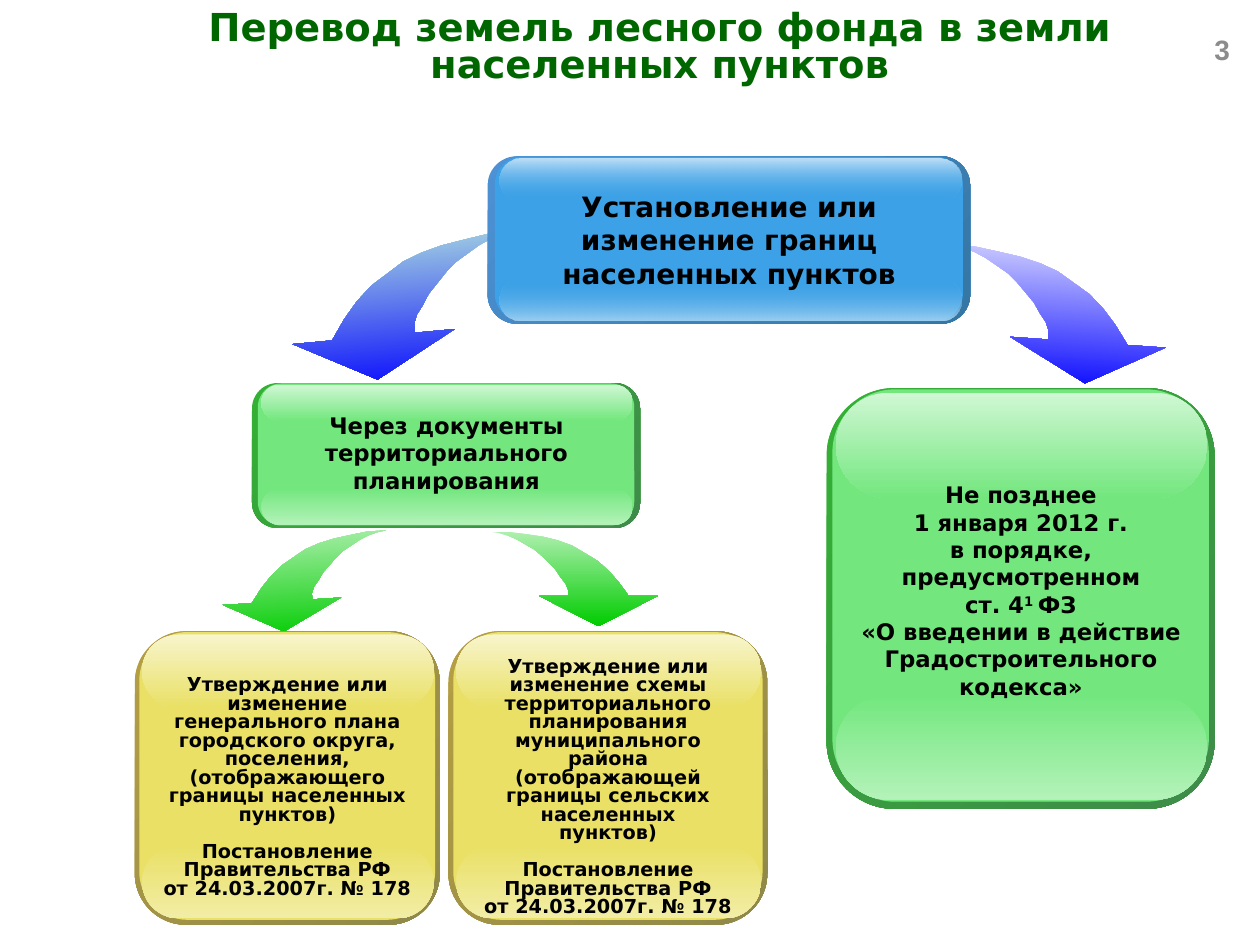
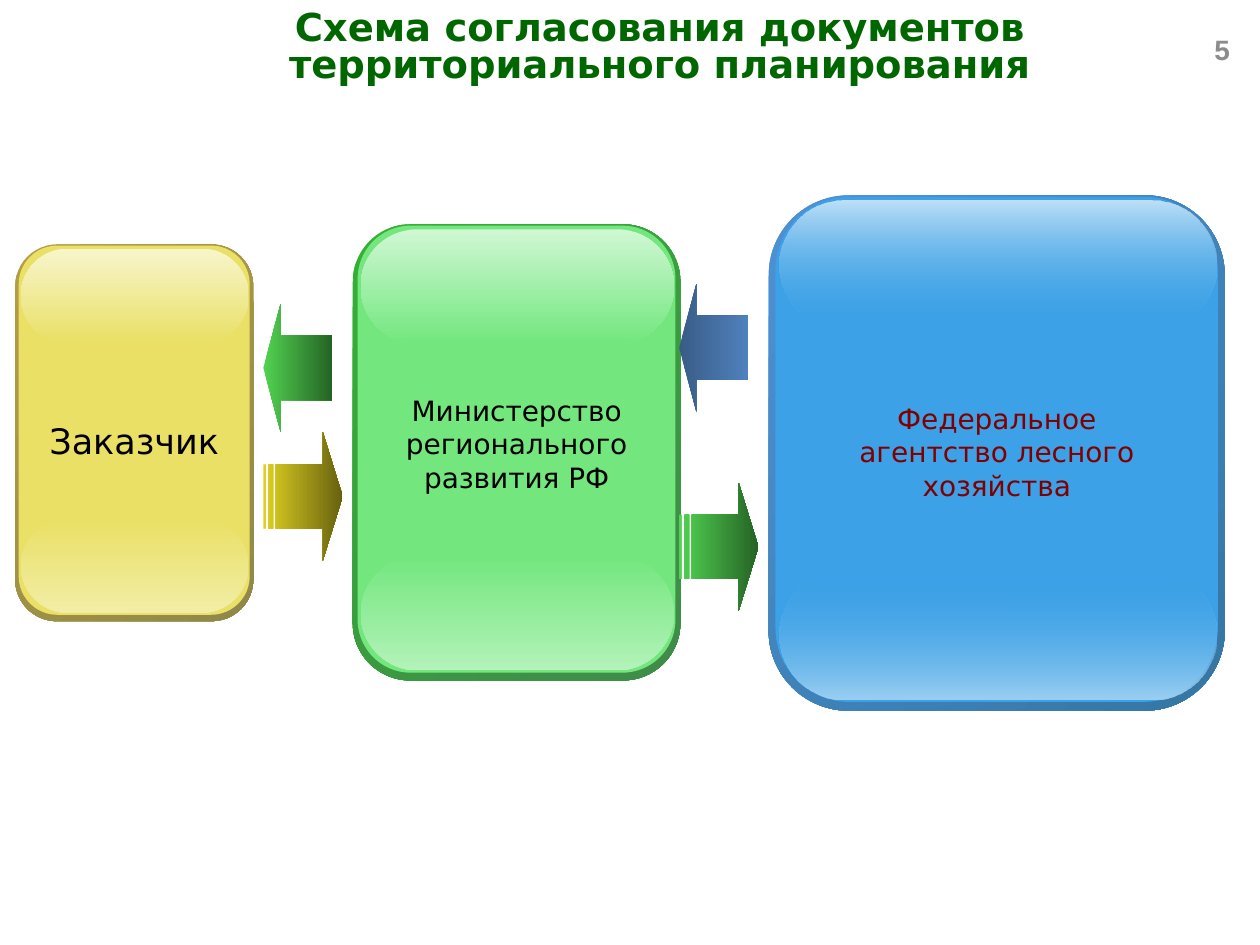
"""Builds two slides on moving forest land into settlements and on plan approval."""
from lxml import etree
from pptx import Presentation
from pptx.dml.color import RGBColor
from pptx.enum import shapes as kinds, text as txt
from pptx.oxml.ns import qn
from pptx.util import Inches, Pt

DECREE = ["Постановление Правительства РФ", "от 24.03.2007г. № 178"]

PALETTES = {
    "blue": dict(rim=("4E91D4", "3477A4"), face="3CA1E6", top=("BEE0F7", "3CA1E600"),
                 bottom=("3CA1E600", "9BCFF2"), text_top=0.08),
    "green": dict(rim=("34B034", "3F8B4A"), face="73E77E", top=("D0F7D4", "73E77E"),
                  bottom=("73E77E", "B3F2B9"), text_top=0.063),
    "yellow": dict(rim=("B59F43", "8F8849"), face="E9E065", top=("F8F5CC", "E9E065"),
                   bottom=("E9E065", "F2EDA6"), text_top=0.116),
}

TRANSFER = dict(
    title="Перевод земель лесного фонда в земли населенных пунктов",
    number="3",
    cards=[
        ("green", (2, 3.04, 3.08, 1.15),
         [["Через документы территориального планирования"]], dict(size=13, bold=True)),
        ("green", (6.56, 3.08, 3.08, 3.34),
         [["Не позднее\n1 января 2012 г.\nв порядке, предусмотренном\nст. 4^1 ^ФЗ\n"
           "«О введении в действие Градостроительного кодекса»"]], dict(size=13, bold=True)),
        ("yellow", (1.07, 5.01, 2.42, 2.33),
         [["Утверждение или изменение генерального плана городского округа, поселения, "
           "(отображающего границы населенных пунктов)"], DECREE],
         dict(size=11, bold=True, spacing=0.8)),
        ("yellow", (3.56, 5.01, 2.53, 2.33),
         [["Утверждение или изменение схемы территориального планирования "
           "муниципального района",
           "(отображающей границы сельских населенных", "пунктов)"], DECREE],
         dict(size=11, bold=True, spacing=0.8)),
        ("blue", (3.87, 1.24, 3.83, 1.33),
         [["Установление или изменение границ населенных пунктов"]],
         dict(size=16, bold=True)),
    ],
)

APPROVAL = dict(
    title="Схема согласования документов территориального планирования",
    number="5",
    cards=[
        ("green", (2.8, 1.78, 2.6, 3.62),
         [["Министерство регионального развития РФ"]], dict(size=16)),
        ("yellow", (0.12, 1.94, 1.89, 2.99), [["Заказчик"]], dict(size=20, spacing=0.75)),
        ("blue", (6.1, 1.55, 3.62, 4.09),
         [["Федеральное", "агентство лесного", "хозяйства"]],
         dict(size=16, color="800000")),
    ],
)

# centre, size, turn, mirrored, colours from tail to head
BENT_ARROWS = [
    ((3.215, 2.455), (1.83, 1.07), -5.3, True, ("AEDFDF", "0000FF")),
    ((8.39, 2.515), (1.75, 1.02), 4, False, ("D8D8FF", "0000FF")),
    ((2.425, 4.625), (1.33, 0.75), -3.6, True, ("AEEFAE", "00CC00")),
    ((4.555, 4.595), (1.33, 0.75), 0, False, ("AEEFAE", "00CC00")),
]
BENT_WIDTH, BENT_HEIGHT = 133, 75
BENT_OUTLINE = [
    (0, 0), (15, 0), (29, 2), (42, 4), (54, 7), (65, 11), (75, 17), (85, 23), (94, 31),
    (102, 40), (110, 51), (133, 51), (86, 75), (39, 51), (62, 51), (62, 46), (60, 41),
    (56, 36), (52, 30), (47, 25), (41, 19), (35, 14), (28, 10), (21, 6), (14, 3), (7, 1),
]

FORTH, BACK = kinds.MSO_SHAPE.STRIPED_RIGHT_ARROW, kinds.MSO_SHAPE.LEFT_ARROW
BLOCK_ARROWS = [
    (FORTH, (5.39, 3.83, 0.63, 1.02), ("51D351", "256225")),
    (FORTH, (2.09, 3.43, 0.63, 1.02), ("DFD121", "67610F")),
    (BACK, (5.39, 2.25, 0.55, 1.02), ("395C87", "4F81BD")),
    (BACK, (2.09, 2.41, 0.55, 1.02), ("51D351", "256225")),
]


def rgb(value):
    return RGBColor.from_string(value[:6])


def paint(shape, colors, angle=0):
    shape.shadow.inherit = False
    shape.line.fill.background()
    if isinstance(colors, str):
        shape.fill.solid()
        shape.fill.fore_color.rgb = rgb(colors)
        return
    shape.fill.gradient()
    shape.fill.gradient_angle = (360 - angle) % 360
    for stop, color, position in zip(shape.fill.gradient_stops, colors, (0, 1)):
        stop.color.rgb = rgb(color)
        stop.position = position
    for color, node in zip(colors, shape._element.spPr.iter(qn("a:srgbClr"))):
        if color[6:] == "00":
            etree.SubElement(node, qn("a:alpha")).set("val", "0")


def add_text(shapes, box, blocks, size, bold=False, color="000000", font="DejaVu Sans",
             spacing=1.0, inset=None):
    frame = shapes.add_textbox(*map(Inches, box)).text_frame
    frame.word_wrap = True
    frame.vertical_anchor = txt.MSO_ANCHOR.MIDDLE
    if inset is not None:
        frame.margin_left = frame.margin_right = Inches(inset)
        frame.margin_top = frame.margin_bottom = Inches(inset)
    first = True
    for block in blocks:
        for index, content in enumerate(block):
            paragraph = frame.paragraphs[0] if first else frame.add_paragraph()
            paragraph.alignment = txt.PP_ALIGN.CENTER
            paragraph.line_spacing = spacing
            if index == 0 and not first:
                paragraph.space_before = Pt(size * 0.95)
            first = False
            for row, line in enumerate(content.split("\n")):
                if row:
                    paragraph.add_line_break()
                for part, piece in enumerate(line.split("^")):
                    run = paragraph.add_run()
                    run.text = piece
                    run.font.size, run.font.bold, run.font.name = Pt(size), bold, font
                    run.font.color.rgb = rgb(color)
                    if part % 2:
                        run._r.get_or_add_rPr().set("baseline", "30000")


def add_card(slide, palette, box, blocks, style):
    left, top, width, height = box
    look = PALETTES[palette]
    group = slide.shapes.add_group_shape().shapes

    def within(x, y, w, h):
        return left + x * width, top + y * height, w * width, h * height

    layers = [
        (within(0, 0, 1, 1), 0.175, look["rim"], 45),
        (within(0.015, 0.003, 0.97, 0.98), 0.167, look["face"], 0),
        (within(0.024, 0.728, 0.957, 0.25), 0.5, look["bottom"], 90),
        (within(0.024, 0.011, 0.957, 0.25), 0.5, look["top"], 90),
    ]
    for area, rounding, colors, angle in layers:
        layer = group.add_shape(kinds.MSO_SHAPE.ROUNDED_RECTANGLE, *map(Inches, area))
        layer.adjustments[0] = rounding
        paint(layer, colors, angle)
    add_text(group, within(0.046, look["text_top"], 0.909, 0.835), blocks, **style)


def add_bent_arrow(slide, centre, size, turn, mirrored, colors):
    points = [(BENT_WIDTH - x if mirrored else x, y) for x, y in BENT_OUTLINE]
    scale = Inches(size[0]) / BENT_WIDTH, Inches(size[1]) / BENT_HEIGHT
    builder = slide.shapes.build_freeform(*points[0], scale=scale)
    builder.add_line_segments(points[1:], close=True)
    arrow = builder.convert_to_shape(*(Inches(c - s / 2) for c, s in zip(centre, size)))
    arrow.rotation = turn
    paint(arrow, colors, 90)


def add_block_arrow(slide, kind, box, colors):
    arrow = slide.shapes.add_shape(kind, *map(Inches, box))
    arrow.adjustments[0], arrow.adjustments[1] = 0.5, 0.25
    paint(arrow, colors)


def add_slide(deck, content):
    slide = deck.slides.add_slide(deck.slide_layouts[6])
    add_text(slide.shapes, (1.09, 0, 8.29, 0.77), [[content["title"]]],
             size=22, bold=True, color="006600", spacing=0.8)
    add_text(slide.shapes, (9.46, 0.06, 0.48, 0.66), [[content["number"]]],
             size=16, bold=True, color="8C8C8C", font="Arial", inset=0)
    return slide


def main():
    deck = Presentation()
    deck.slide_width, deck.slide_height = Inches(10), Inches(7.5)

    transfer = add_slide(deck, TRANSFER)
    for arrow in BENT_ARROWS:
        add_bent_arrow(transfer, *arrow)
    for card in TRANSFER["cards"]:
        add_card(transfer, *card)

    approval = add_slide(deck, APPROVAL)
    for card in APPROVAL["cards"]:
        add_card(approval, *card)
    for arrow in BLOCK_ARROWS:
        add_block_arrow(approval, *arrow)

    deck.save("out.pptx")


if __name__ == "__main__":
    main()
